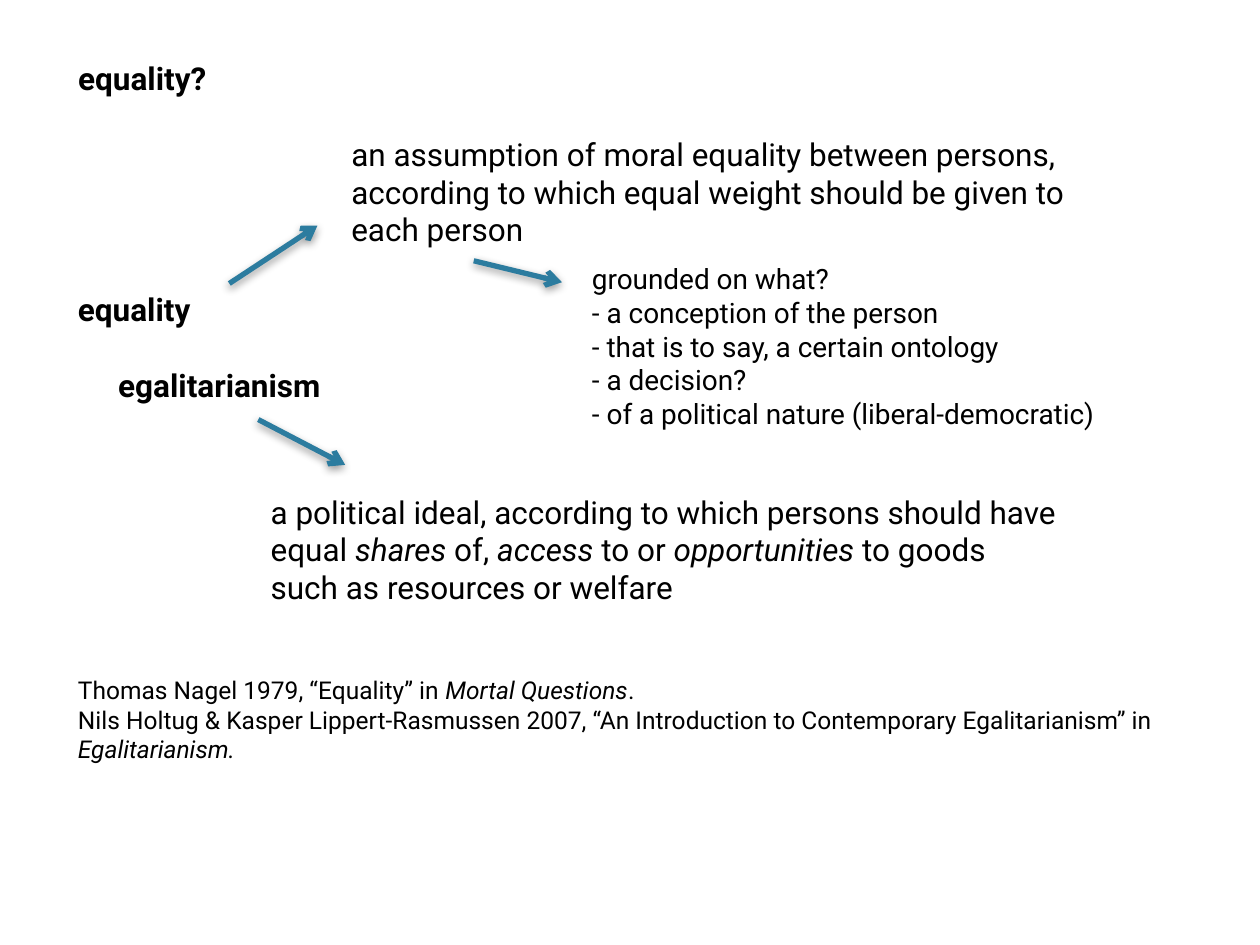
from pptx import Presentation
from pptx.dml.color import RGBColor
from pptx.enum.shapes import MSO_CONNECTOR as Connector
from pptx.enum.text import MSO_ANCHOR as Anchor, MSO_AUTO_SIZE as AutoSize, PP_ALIGN as Align
from pptx.oxml import parse_xml
from pptx.oxml.ns import nsdecls
from pptx.util import Inches, Pt

INK = RGBColor(0x00, 0x00, 0x00)
ARROW_BLUE = RGBColor(0x2C, 0x7C, 0x9F)
CELL = Inches(0.1)
FRAME = {
    "word_wrap": True, "auto_size": AutoSize.SHAPE_TO_FIT_TEXT, "vertical_anchor": Anchor.TOP,
    "margin_left": CELL, "margin_right": CELL,
    "margin_top": CELL // 2, "margin_bottom": CELL // 2,
}
ARROWHEAD = f'<a:tailEnd {nsdecls("a")} type="arrow"/>'
SHADOW = (
    f'<a:effectLst {nsdecls("a")}>'
    f'<a:outerShdw blurRad="{Pt(5)}" dist="{Pt(2)}" dir="5400000" rotWithShape="0">'
    f'<a:srgbClr val="{INK}"><a:alpha val="40000"/></a:srgbClr>'
    '</a:outerShdw></a:effectLst>'
)


def assign(target, values):
    for name, value in values.items():
        setattr(target, name, value)


class EqualitySlide:
    """Draws headings, passages and arrows on a grid of 100 columns by 75 rows."""

    def __init__(self, deck):
        self.slide = deck.slides.add_slide(deck.slide_layouts[5])

    def grid(self, *cells):
        return [round(cell * CELL) for cell in cells]

    def fill_text(self, holder, passages, size, bold):
        frame = holder.text_frame
        assign(frame, FRAME)
        for index, passage in enumerate(passages):
            paragraph = frame.add_paragraph() if index else frame.paragraphs[0]
            paragraph.alignment = Align.LEFT
            for position, words in enumerate(passage.split("*")):
                if words:
                    run = paragraph.add_run()
                    run.text = words
                    assign(run.font, {"name": "Roboto", "size": Pt(size),
                                      "bold": bold, "italic": position % 2 == 1})
                    run.font.color.rgb = INK

    def title(self, area, heading):
        holder = self.slide.shapes.title
        assign(holder, dict(zip(("left", "top", "width", "height"), self.grid(*area))))
        self.fill_text(holder, [heading], 18, True)

    def text(self, area, *passages, size=18, bold=False):
        holder = self.slide.shapes.add_textbox(*self.grid(*area))
        self.fill_text(holder, passages, size, bold)

    def arrow(self, *ends):
        arrow = self.slide.shapes.add_connector(Connector.STRAIGHT, *self.grid(*ends))
        arrow.line.color.rgb = ARROW_BLUE
        arrow.line.width = Pt(3)
        arrow.line._get_or_add_ln().append(parse_xml(ARROWHEAD))
        arrow._element.spPr.append(parse_xml(SHADOW))


def main():
    deck = Presentation()
    assign(deck, {"slide_width": 100 * CELL, "slide_height": 75 * CELL})
    page = EqualitySlide(deck)

    page.title((5.2, 4.2, 13, 4), "equality?")
    page.text((5.2, 22.5, 13, 4), "equality", bold=True)
    page.text((8.4, 28.6, 19.6, 4), "egalitarianism", bold=True)
    page.text((26.9, 10.2, 64.4, 10.1),
              "an assumption of moral equality between persons, according to which "
              "equal weight should be given to each person")
    page.text((20.5, 38.6, 64.4, 10.1),
              "a political ideal, according to which persons should have equal *shares* of, "
              "*access* to or *opportunities* to goods such as resources or welfare")
    page.text((46, 20.3, 50.6, 14.5),
              "grounded on what?",
              "- a conception of the person",
              "- that is to say, a certain ontology",
              "- a decision?",
              "- of a political nature (liberal-democratic)", size=16)
    page.text((5.2, 53.1, 88.2, 8.1),
              "Thomas Nagel 1979, “Equality” in *Mortal Questions*.",
              "Nils Holtug & Kasper Lippert-Rasmussen 2007, “An Introduction to "
              "Contemporary Egalitarianism” in *Egalitarianism.*", size=14)

    page.arrow(18.2, 22.5, 25.2, 17.9)
    page.arrow(20.5, 33.3, 27.4, 36.9)
    page.arrow(37.6, 20.7, 44.6, 22.4)
    deck.save("out.pptx")


if __name__ == "__main__":
    main()
